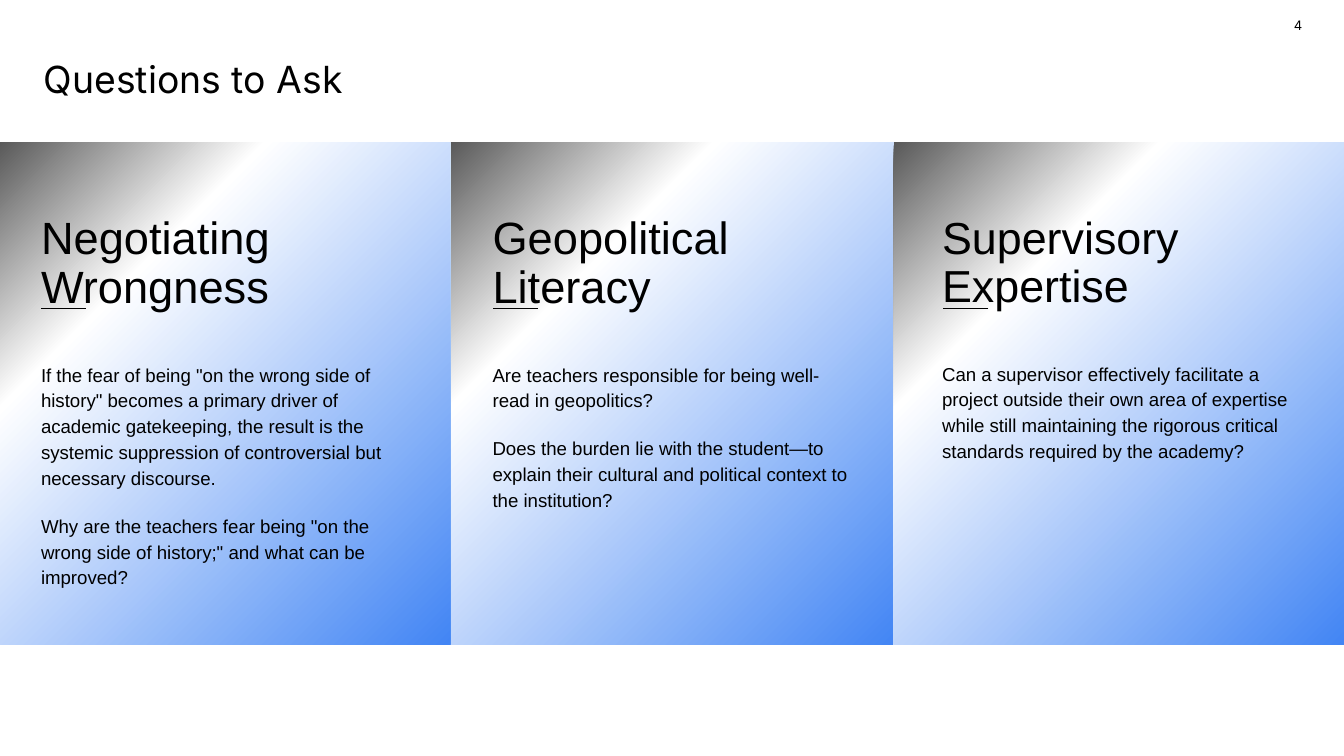
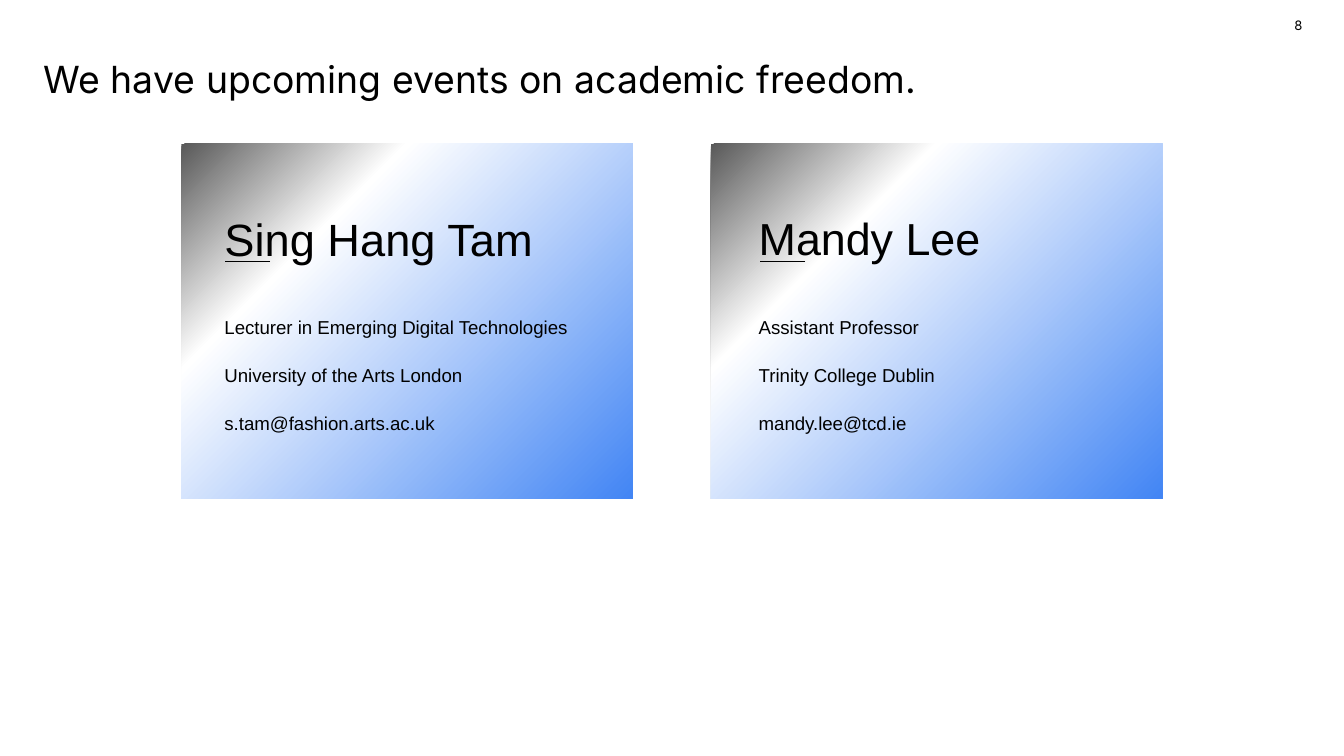
from dataclasses import dataclass

from lxml import etree
from pptx import Presentation
from pptx import util as u
from pptx.dml import color
from pptx.enum import shapes, text
from pptx.oxml import ns

PX = 4572  # EMU per px, 200 px to the inch
BLACK = "000000"
STOPS = [(0, "4285F4"), (72, "FFFFFF"), (100, "595959")]
SANS, TITLE = "Arial", "Inter"


@dataclass
class Card:
    left: int
    width: int
    inset: int  # left edge of the text
    rule: int  # left edge of the short line
    heads: list[str]
    body: list[str]
    size: float = 24.2
    tall: int = 600


@dataclass
class Page:
    number: str
    title: str
    wide: int  # title width
    top: int
    height: int
    rule: int  # height of the short lines on the page
    cards: list[Card]


def px(n: int) -> u.Emu:
    return u.Emu(n * PX)


def rgb(code: str) -> color.RGBColor:
    return color.RGBColor.from_string(code)


# Text
def add_box(slide, left: int, top: int, width: int, height: int):
    frame = slide.shapes.add_textbox(px(left), px(top), px(width), px(height)).text_frame
    frame.word_wrap = True
    frame.margin_left = frame.margin_right = 0
    frame.margin_top = frame.margin_bottom = px(20)
    return frame


def add_run(para, words: str, size: float, face: str) -> None:
    run = para.add_run()
    run.text = words
    run.font.size = u.Pt(size)
    run.font.name = face
    run.font.color.rgb = rgb(BLACK)


def add_text(frame, words: str, size: float, spacing: float, before: int) -> None:
    first = frame.paragraphs[0]
    para = frame.add_paragraph() if first.runs else first
    para.line_spacing = spacing
    para.space_before = u.Pt(before)
    add_run(para, words, size, SANS)


# Panel with a gradient that spreads from its lower right corner
def add_panel(slide, left: int, top: int, width: int, height: int) -> None:
    panel = slide.shapes.add_shape(
        shapes.MSO_SHAPE.RECTANGLE, px(left), px(top), px(width), px(height))
    panel.shadow.inherit = False
    panel.line.fill.background()
    panel.fill.background()
    grad = etree.Element(ns.qn("a:gradFill"), rotWithShape="1")
    stops = etree.SubElement(grad, ns.qn("a:gsLst"))
    for pos, code in STOPS:
        stop = etree.SubElement(stops, ns.qn("a:gs"), pos=str(pos * 1000))
        etree.SubElement(stop, ns.qn("a:srgbClr"), val=code)
    route = etree.SubElement(grad, ns.qn("a:path"), path="circle")
    etree.SubElement(route, ns.qn("a:fillToRect"), l="100000", t="100000")
    etree.SubElement(grad, ns.qn("a:tileRect"))
    props = panel.element.spPr
    props.replace(props.find(ns.qn("a:noFill")), grad)


def add_rule(slide, left: int, top: int) -> None:
    line = slide.shapes.add_connector(
        shapes.MSO_CONNECTOR.STRAIGHT, px(left + 67), px(top), px(left), px(top))
    line.line.color.rgb = rgb(BLACK)
    line.line.width = u.Pt(0.75)
    etree.SubElement(line.element.spPr, ns.qn("a:effectLst"))


def add_words(slide, card: Card, top: int) -> None:
    frame = add_box(slide, card.inset, top + 89, 536, card.tall)
    for head in card.heads:
        add_text(frame, head, card.size, 0.9, 0)
    for i, words in enumerate(card.body):
        add_text(frame, words, 10, 1.15, 12 if i else 25)


# Title and page number
def add_frame(slide, page: Page) -> None:
    number = add_box(slide, 1819, 14, 119, 64)
    number.auto_size = text.MSO_AUTO_SIZE.SHAPE_TO_FIT_TEXT
    number.paragraphs[0].alignment = text.PP_ALIGN.RIGHT
    add_run(number.paragraphs[0], page.number, 7, TITLE)
    title = add_box(slide, 65, 14, page.wide, 156)
    title.vertical_anchor = text.MSO_ANCHOR.BOTTOM
    add_run(title.paragraphs[0], page.title, 20, TITLE)


def add_page(deck, page: Page) -> None:
    slide = deck.slides.add_slide(deck.slide_layouts[6])
    # The narrow panel lies beneath its wider neighbours
    for card in sorted(page.cards, key=lambda c: c.width):
        add_panel(slide, card.left, page.top, card.width, page.height)
    for card in page.cards:
        add_words(slide, card, page.top)
    add_frame(slide, page)
    for card in page.cards:
        add_rule(slide, card.rule, page.rule)


PAGES = [
    Page("4", "Questions to Ask", 1404, 212, 747, 459, [
        Card(-2, 672, 61, 61, ["Negotiating", "Wrongness"], [
            'If the fear of being "on the wrong side of history" becomes a primary '
            "driver of academic gatekeeping, the result is the systemic suppression "
            "of controversial but necessary discourse.",
            'Why are the teachers fear being "on the wrong side of history;" and '
            "what can be improved?"]),
        Card(668, 666, 733, 734, ["Geopolitical Literacy"], [
            "Are teachers responsible for being well-read in geopolitics?",
            "Does the burden lie with the student—to explain their cultural and "
            "political context to the institution?"]),
        Card(1330, 672, 1402, 1404, ["Supervisory Expertise"], [
            "Can a supervisor effectively facilitate a project outside their own "
            "area of expertise while still maintaining the rigorous critical "
            "standards required by the academy?"], 24, 716),
    ]),
    Page("8", "We have upcoming events on academic freedom.", 1854, 214, 528, 389, [
        Card(270, 672, 334, 335, ["Sing Hang Tam"], [
            "Lecturer in Emerging Digital Technologies",
            "University of the Arts London",
            "s.tam@fashion.arts.ac.uk"]),
        Card(1058, 672, 1129, 1131, ["Mandy Lee"], [
            "Assistant Professor",
            "Trinity College Dublin",
            "mandy.lee@tcd.ie"], 24, 716),
    ]),
]


def main() -> None:
    deck = Presentation()
    deck.slide_width, deck.slide_height = px(2000), px(1125)
    for page in PAGES:
        add_page(deck, page)
    deck.save("out.pptx")


if __name__ == "__main__":
    main()
